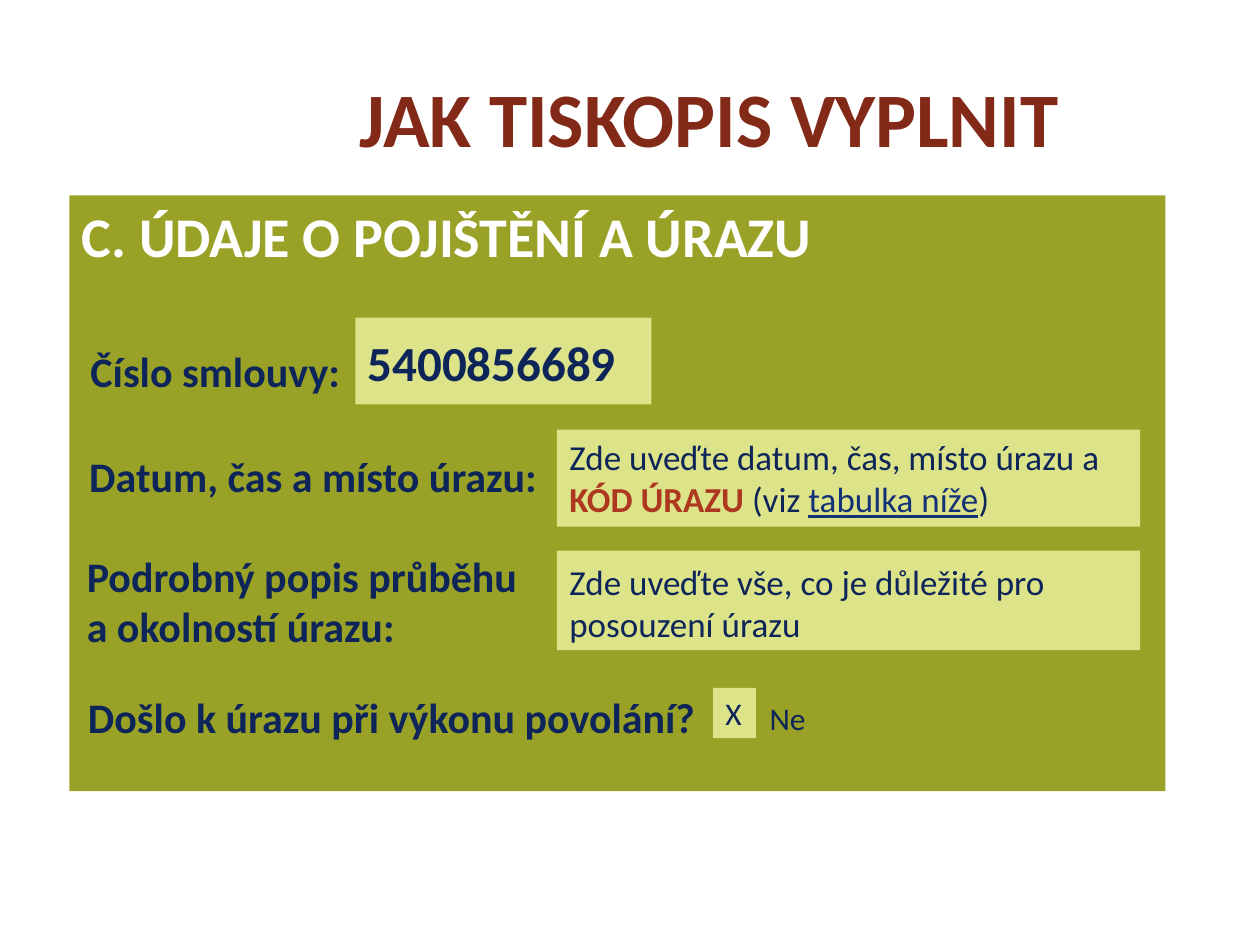
from dataclasses import dataclass
from typing import Optional

from lxml.etree import SubElement
from pptx import Presentation
from pptx.dml.color import RGBColor
from pptx.enum.shapes import MSO_SHAPE
from pptx.enum.text import MSO_ANCHOR as Anchor, MSO_AUTO_SIZE as AutoSize, PP_ALIGN as Align
from pptx.oxml.ns import qn
from pptx.util import Inches, Pt

NAVY, WHITE, RUST, RED, LINK = "0E2559", "FFFFFF", "822917", "AD371F", "133176"
OLIVE, LIME = "99A226", "DDE389"
ANSWER_LEFT, ANSWER_WIDTH = 4.42, 4.63


@dataclass
class Span:
    text: str
    color: str = NAVY
    bold: bool = False
    underline: bool = False


@dataclass
class Field:
    spans: list[Span]
    left: float
    top: float
    width: float
    height: float
    size: int
    fill: Optional[str] = None
    inset_top: float = 0.05
    wrap: bool = True


def label(text: str, left: float, top: float, width: float, **options) -> Field:
    return Field([Span(text, bold=True)], left, top, width, 0.5, 24, **options)


def paint(target, color: str) -> None:
    target.fill.solid()
    target.fill.fore_color.rgb = RGBColor.from_string(color)


def place(shape, left: float, top: float, width: float, height: float) -> None:
    shape.left, shape.top = Inches(left), Inches(top)
    shape.width, shape.height = Inches(width), Inches(height)


def write(frame, spans: list[Span], *, size: int, align=Align.LEFT,
          anchor=Anchor.TOP, wrap: bool = True, inset_top: float = 0.05):
    frame.word_wrap = wrap
    frame.auto_size = AutoSize.NONE
    frame.vertical_anchor = anchor
    frame.margin_left = frame.margin_right = Inches(0.1)
    frame.margin_top, frame.margin_bottom = Inches(inset_top), Inches(0.05)
    para = frame.paragraphs[0]
    para.alignment = align
    para.space_before = Pt(0)
    for span in spans:
        run = para.add_run()
        run.text = span.text
        font = run.font
        font.name, font.size = "Calibri", Pt(size)
        font.bold, font.underline = span.bold, span.underline
        font.color.rgb = RGBColor.from_string(span.color)
    return para


def draw_field(page, field: Field) -> None:
    area = [Inches(v) for v in (field.left, field.top, field.width, field.height)]
    if field.fill:
        box = page.shapes.add_shape(MSO_SHAPE.RECTANGLE, *area)
        box.shadow.inherit = False
        box.line.fill.background()
        paint(box, field.fill)
    else:
        box = page.shapes.add_textbox(*area)
    write(box.text_frame, field.spans, size=field.size, wrap=field.wrap,
          inset_top=field.inset_top)


FIELDS = [
    # Contract number
    Field([Span("5400856689", bold=True)], 2.82, 2.52, 2.35, 0.69, 28, LIME, 0.12),
    label("Číslo smlouvy:", 0.62, 2.69, 2.2, wrap=False),
    # Date, time and place
    label("Datum, čas a místo úrazu:", 0.61, 3.53, 3.81),
    Field([Span("Zde uveďte datum, čas, místo úrazu a "),
           Span("KÓD ÚRAZU ", RED, bold=True), Span("(viz "),
           Span("tabulka níže", LINK, underline=True), Span(")")],
          ANSWER_LEFT, 3.41, ANSWER_WIDTH, 0.77, 20, LIME),
    # Description of the injury
    Field([Span("Podrobný popis průběhu a okolností úrazu:", bold=True)],
          0.59, 4.13, 3.65, 1.1, 24, OLIVE, 0.24),
    Field([Span("Zde uveďte vše, co je důležité pro posouzení úrazu")],
          ANSWER_LEFT, 4.37, ANSWER_WIDTH, 0.79, 20, LIME, 0.08),
    # Injury at work
    label("Došlo k úrazu při výkonu povolání?", 0.6, 5.44, 5.06, wrap=False),
    Field([Span("X")], 5.66, 5.46, 0.34, 0.4, 18, LIME),
    Field([Span("Ne")], 6.01, 5.5, 0.49, 0.4, 18, wrap=False),
]


def main() -> None:
    deck = Presentation()
    deck.slide_width, deck.slide_height = Inches(10), Inches(7.5)
    page = deck.slides.add_slide(deck.slide_layouts[1])
    paint(page.background, WHITE)

    # Title
    title = page.shapes.title
    place(title, 1.76, 0.3, 7.74, 1.25)
    write(title.text_frame, [Span("JAK TISKOPIS VYPLNIT", RUST, bold=True)],
          size=44, align=Align.CENTER, anchor=Anchor.MIDDLE)

    # Form panel with its section heading
    panel = page.placeholders[1]
    place(panel, 0.55, 1.55, 8.7, 4.73)
    paint(panel, OLIVE)
    heading = write(panel.text_frame,
                    [Span("C. ÚDAJE O POJIŠTĚNÍ A ÚRAZU", WHITE, bold=True)], size=32)
    properties = heading._p.get_or_add_pPr()
    properties.set("marL", str(Inches(0.38)))
    properties.set("indent", str(Inches(-0.38)))
    SubElement(properties, qn("a:buNone"))

    # Form fields
    for field in FIELDS:
        draw_field(page, field)

    deck.save("out.pptx")


if __name__ == "__main__":
    main()
